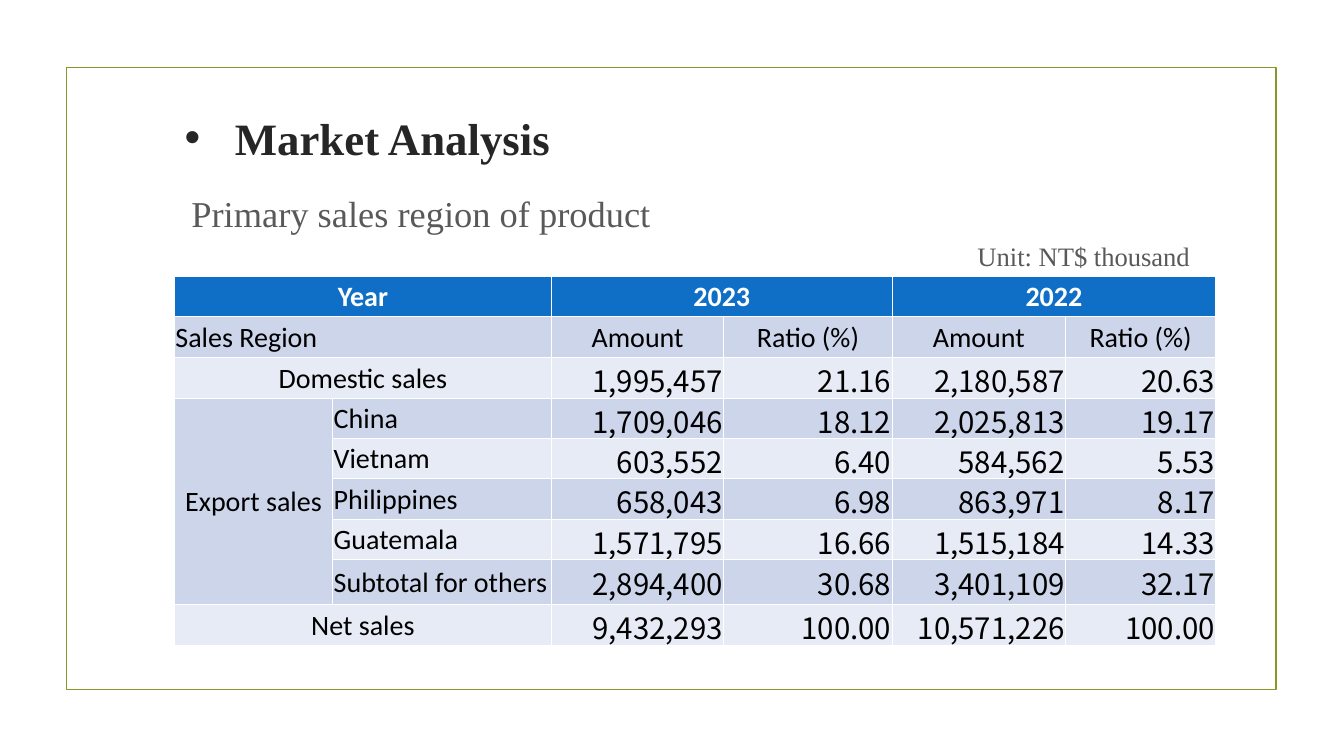
from lxml import etree
from pptx import Presentation
from pptx import util as u
from pptx.dml.color import RGBColor
from pptx.enum import shapes, text
from pptx.oxml import ns

COLORS = {
    "frame": "83992A",
    "title": "262626",
    "body": "595959",
    "header": "0F6FC6",
    "dark_band": "CCD5EA",
    "light_band": "E7EBF5",
    "white": "FFFFFF",
    "black": "000000",
}
SERIF, SANS, FIGURES = "Times New Roman", "Calibri", "Noto Sans CJK SC"
LEFT, CENTER, RIGHT = text.PP_ALIGN.LEFT, text.PP_ALIGN.CENTER, text.PP_ALIGN.RIGHT

COLUMN_WIDTHS = [1.57, 2.17, 1.71, 1.67, 1.72, 1.49]
ROW_HEIGHTS = [0.4, 0.41, 0.4, 0.4, 0.4, 0.4, 0.4, 0.45, 0.4]
SALES = [
    ["Year", None, "2023", None, "2022", None],
    ["Sales Region", None, "Amount", "Ratio (%)", "Amount", "Ratio (%)"],
    ["Domestic sales", None, "1,995,457", "21.16", "2,180,587", "20.63"],
    ["Export sales", "China", "1,709,046", "18.12", "2,025,813", "19.17"],
    [None, "Vietnam", "603,552", "6.40", "584,562", "5.53"],
    [None, "Philippines", "658,043", "6.98", "863,971", "8.17"],
    [None, "Guatemala", "1,571,795", "16.66", "1,515,184", "14.33"],
    [None, "Subtotal for others", "2,894,400", "30.68", "3,401,109", "32.17"],
    ["Net sales", None, "9,432,293", "100.00", "10,571,226", "100.00"],
]
MERGES = [
    (0, 0, 0, 1), (0, 2, 0, 3), (0, 4, 0, 5),
    (1, 0, 1, 1), (2, 0, 2, 1), (3, 0, 7, 0), (8, 0, 8, 1),
]


def rgb(name):
    return RGBColor.from_string(COLORS[name])


class SlideBuilder:
    def __init__(self, presentation):
        self.slide = presentation.slides.add_slide(presentation.slide_layouts[5])

    def add_words(self, paragraph, words, size, font, color, align=LEFT, bold=False):
        paragraph.alignment = align
        run = paragraph.add_run()
        run.text = words
        run.font.size = u.Pt(size)
        run.font.name = font
        run.font.bold = bold
        run.font.color.rgb = rgb(color)

    def frame(self, left, top, width, height):
        shape = self.slide.shapes.add_shape(
            shapes.MSO_SHAPE.RECTANGLE,
            u.Inches(left), u.Inches(top), u.Inches(width), u.Inches(height))
        shape.shadow.inherit = False
        shape.fill.background()
        shape.line.color.rgb = rgb("frame")
        shape.line.width = u.Pt(1.25)

    def title(self, left, top, width, height, words):
        shape = self.slide.shapes.title
        shape.left, shape.top = u.Inches(left), u.Inches(top)
        shape.width, shape.height = u.Inches(width), u.Inches(height)
        frame = shape.text_frame
        frame.auto_size = text.MSO_AUTO_SIZE.NONE
        frame.vertical_anchor = text.MSO_ANCHOR.MIDDLE
        paragraph = frame.paragraphs[0]
        properties = paragraph._p.get_or_add_pPr()
        properties.set("marL", str(u.Inches(0.5)))
        properties.set("indent", str(u.Inches(-0.5)))
        etree.SubElement(properties, ns.qn("a:buFont"), typeface="Arial")
        etree.SubElement(properties, ns.qn("a:buChar"), char="•")
        self.add_words(paragraph, words, 32, SERIF, "title", bold=True)

    def caption(self, left, top, width, height, heading, unit):
        box = self.slide.shapes.add_textbox(
            u.Inches(left), u.Inches(top), u.Inches(width), u.Inches(height))
        frame = box.text_frame
        frame.word_wrap = True
        frame.vertical_anchor = text.MSO_ANCHOR.MIDDLE
        self.add_words(frame.paragraphs[0], heading, 26, SERIF, "body")
        paragraph = frame.add_paragraph()
        paragraph.space_before = u.Pt(4)
        self.add_words(paragraph, unit, 19, SERIF, "body", RIGHT)

    def borders(self, cell, row):
        properties = cell._tc.get_or_add_tcPr()
        for side in ("L", "R", "T", "B"):
            under_header = (row, side) in ((0, "B"), (1, "T"))
            width = u.Pt(1.5 if under_header else 1)
            line = etree.SubElement(properties, ns.qn(f"a:ln{side}"), w=str(width))
            fill = etree.SubElement(line, ns.qn("a:solidFill"))
            etree.SubElement(fill, ns.qn("a:srgbClr"), val=COLORS["white"])

    def cell(self, cell, row, column, words):
        self.borders(cell, row)
        band = "dark_band" if row % 2 else "light_band"
        cell.fill.solid()
        cell.fill.fore_color.rgb = rgb("header" if row == 0 else band)
        cell.margin_left = cell.margin_right = cell.margin_top = u.Inches(0.01)
        cell.margin_bottom = 0
        cell.vertical_anchor = text.MSO_ANCHOR.MIDDLE
        if words is None:
            return
        paragraph = cell.text_frame.paragraphs[0]
        if row == 0:
            self.add_words(paragraph, words, 20, SANS, "white", CENTER, True)
        elif row > 1 and column > 1:
            self.add_words(paragraph, words, 21, FIGURES, "black", RIGHT)
        else:
            is_left = column == 1 or (row, column) == (1, 0)
            self.add_words(paragraph, words, 20, SANS, "black", LEFT if is_left else CENTER)

    def table(self, left, top, rows, widths, heights, merges):
        table = self.slide.shapes.add_table(
            len(rows), len(widths), u.Inches(left), u.Inches(top),
            u.Inches(sum(widths)), u.Inches(sum(heights))).table
        table.horz_banding = False
        for column, width in zip(table.columns, widths):
            column.width = u.Inches(width)
        for table_row, height in zip(table.rows, heights):
            table_row.height = u.Inches(height)
        for first_row, first_column, last_row, last_column in merges:
            table.cell(first_row, first_column).merge(table.cell(last_row, last_column))
        for row, values in enumerate(rows):
            for column, words in enumerate(values):
                self.cell(table.cell(row, column), row, column, words)


def main():
    presentation = Presentation()
    presentation.slide_width = u.Inches(13.33)
    presentation.slide_height = u.Inches(7.5)
    builder = SlideBuilder(presentation)
    builder.frame(0.66, 0.67, 12, 6.17)
    builder.title(1.73, 0.92, 10.02, 0.88, "Market Analysis")
    builder.caption(1.8, 1.82, 10.1, 0.95,
                    "Primary sales region of product", "Unit: NT$ thousand")
    builder.table(1.73, 2.74, SALES, COLUMN_WIDTHS, ROW_HEIGHTS, MERGES)
    presentation.save("out.pptx")


if __name__ == "__main__":
    main()
